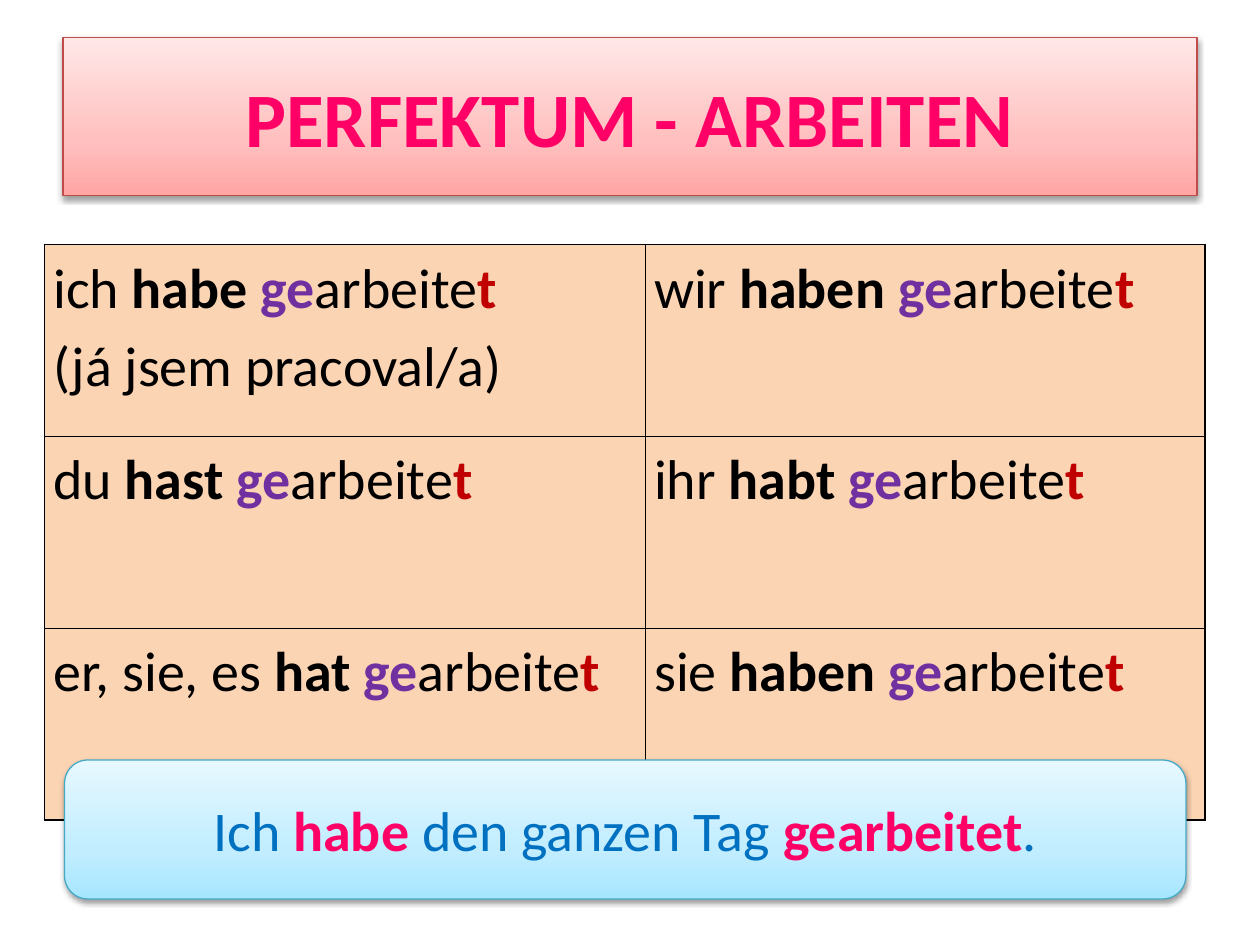
import copy

import pptx
import pptx.dml.color
import pptx.enum.shapes
import pptx.enum.text
import pptx.oxml
import pptx.oxml.ns
import pptx.util

Pt = pptx.util.Pt
RGBColor = pptx.dml.color.RGBColor
qn = pptx.oxml.ns.qn
CENTER = pptx.enum.text.PP_ALIGN.CENTER
MIDDLE = pptx.enum.text.MSO_ANCHOR.MIDDLE

BLACK = RGBColor(0x00, 0x00, 0x00)
PINK = RGBColor(0xFF, 0x00, 0x66)
PURPLE = RGBColor(0x70, 0x30, 0xA0)
DARK_RED = RGBColor(0xC0, 0x00, 0x00)
BLUE = RGBColor(0x00, 0x70, 0xC0)
PEACH = RGBColor(0xFB, 0xD4, 0xB4)
RED_LINE = RGBColor(0xBF, 0x4C, 0x48)
TEAL_LINE = RGBColor(0x46, 0xAA, 0xC5)
RED_SHADES = [RGBColor(0xFF, 0xA6, 0xA5), RGBColor(0xFF, 0xC0, 0xBF),
              RGBColor(0xFF, 0xE7, 0xE7)]
AQUA_SHADES = [RGBColor(0xA7, 0xE6, 0xFF), RGBColor(0xC1, 0xED, 0xFF),
               RGBColor(0xE7, 0xF8, 0xFF)]
SHADE_POSITIONS = [0, 0.35, 1]

CONJUGATION = [[("ich", "habe"), ("wir", "haben")],
               [("du", "hast"), ("ihr", "habt")],
               [("er, sie, es", "hat"), ("sie", "haben")]]
TRANSLATION = "(já jsem pracoval/a)"

SHADOW = """<a:outerShdw %s blurRad="%d" dist="%d" dir="5400000" rotWithShape="0">
<a:srgbClr val="000000"><a:alpha val="38000"/></a:srgbClr></a:outerShdw>"""
BORDER = """<a:%s %s w="%d"><a:solidFill><a:srgbClr val="%s"/></a:solidFill></a:%s>"""


def write(para, text, *, font="Calibri", size=32, color=BLACK, bold=False):
    span = para.add_run()
    span.text = text
    span.font.name = font
    span.font.size = Pt(size)
    span.font.color.rgb = color
    span.font.bold = bold


def write_perfect(para, pronoun, auxiliary):
    """Write one form of the perfect tense with its prefix and ending marked."""
    write(para, pronoun + " ")
    write(para, auxiliary + " ", bold=True)
    write(para, "ge", color=PURPLE, bold=True)
    write(para, "arbeite")
    write(para, "t", color=DARK_RED, bold=True)


class SlideBuilder:
    namespace = pptx.oxml.ns.nsdecls("a")

    def __init__(self, page):
        self.page = page

    def place(self, shape, left, top, width, height):
        shape.left, shape.top = Pt(left), Pt(top)
        shape.width, shape.height = Pt(width), Pt(height)

    def style_panel(self, shape, shades, line_color):
        """Give a shape a three-step gradient, thin outline and soft shadow."""
        shape.fill.gradient()
        shape.fill.gradient_angle = 90
        properties = shape._element.spPr
        stop_list = properties.find(qn("a:gradFill")).find(qn("a:gsLst"))
        stop_list.insert(1, copy.deepcopy(stop_list[0]))
        for stop, position, shade in zip(shape.fill.gradient_stops,
                                         SHADE_POSITIONS, shades):
            stop.position = position
            stop.color.rgb = shade
        shape.line.color.rgb = line_color
        shape.line.width = Pt(0.75)
        shape.shadow.inherit = False
        shadow = SHADOW % (self.namespace, Pt(3.1), Pt(1.6))
        properties.find(qn("a:effectLst")).append(pptx.oxml.parse_xml(shadow))
        shape.text_frame.word_wrap = True
        shape.text_frame.vertical_anchor = MIDDLE

    def add_title(self, text, bounds):
        title = self.page.shapes.title
        self.place(title, *bounds)
        self.style_panel(title, RED_SHADES, RED_LINE)
        para = title.text_frame.paragraphs[0]
        para.alignment = CENTER
        write(para, text, size=44, color=PINK, bold=True)

    def style_cell(self, cell):
        cell.margin_left = cell.margin_right = Pt(5)
        cell.margin_top = cell.margin_bottom = 0
        properties = cell._tc.get_or_add_tcPr()
        for side in ("lnL", "lnR", "lnT", "lnB"):
            border = BORDER % (side, self.namespace, Pt(1), BLACK, side)
            properties.append(pptx.oxml.parse_xml(border))
        cell.fill.solid()
        cell.fill.fore_color.rgb = PEACH

    def add_conjugation(self, left, top, widths, row_height):
        count = len(CONJUGATION)
        frame = self.page.shapes.add_table(
            count, len(widths), Pt(left), Pt(top),
            Pt(sum(widths)), Pt(row_height * count))
        table = frame.table
        table.first_row = table.horz_banding = False
        for column, width in zip(table.columns, widths):
            column.width = Pt(width)
        for row, forms in zip(table.rows, CONJUGATION):
            row.height = Pt(row_height)
            for cell, form in zip(row.cells, forms):
                self.style_cell(cell)
                write_perfect(cell.text_frame.paragraphs[0], *form)
        first = table.cell(0, 0).text_frame
        write(first.add_paragraph(), TRANSLATION)
        for cell in table.iter_cells():
            for para in cell.text_frame.paragraphs:
                para.line_spacing = 1.15

    def add_example(self, parts, bounds):
        """Add a rounded box; parts are (text, is highlighted) pairs."""
        box = self.page.shapes.add_shape(
            pptx.enum.shapes.MSO_SHAPE.ROUNDED_RECTANGLE,
            *[Pt(length) for length in bounds])
        self.style_panel(box, AQUA_SHADES, TEAL_LINE)
        para = box.text_frame.paragraphs[0]
        para.alignment = CENTER
        for text, highlighted in parts:
            write(para, text, color=PINK if highlighted else BLUE, bold=highlighted)


def main():
    deck = pptx.Presentation()
    deck.slide_width, deck.slide_height = Pt(720), Pt(540)
    builder = SlideBuilder(deck.slides.add_slide(deck.slide_layouts[5]))
    builder.add_title("PERFEKTUM - ARBEITEN", (36, 21.6, 648, 90))
    builder.add_conjugation(25.4, 139.7, (343.4, 319.9), 109.7)
    builder.add_example([("Ich ", False), ("habe", True),
                         (" den ganzen Tag ", False), ("gearbeitet", True),
                         (".", False)], (36.9, 434.3, 640.8, 79.4))
    deck.save("out.pptx")


if __name__ == "__main__":
    main()
